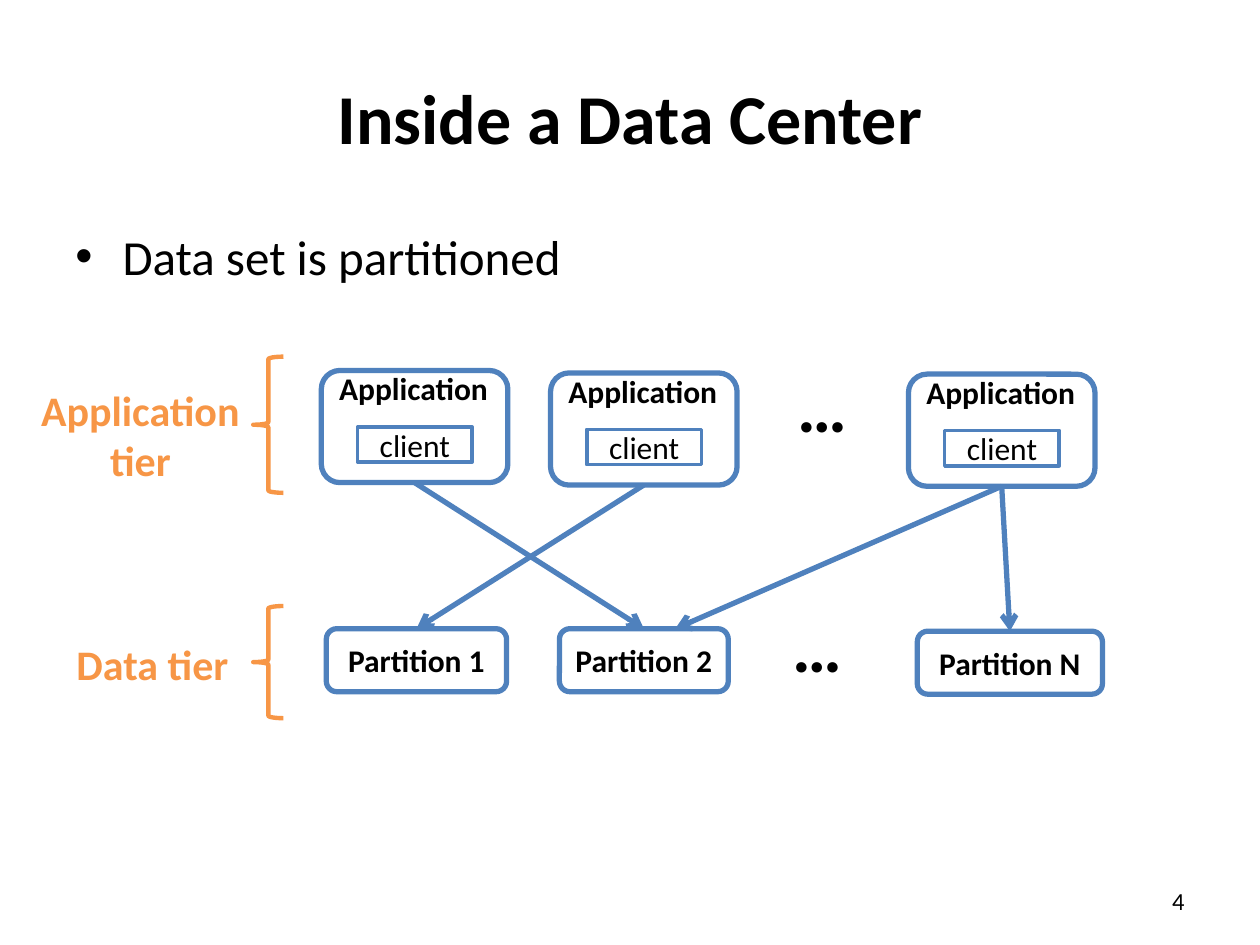
from typing import NamedTuple, Optional

from lxml.etree import SubElement
from pptx import Presentation
from pptx.dml.color import RGBColor
from pptx.enum.shapes import MSO_CONNECTOR, MSO_SHAPE
from pptx.enum.text import MSO_ANCHOR, PP_ALIGN
from pptx.oxml.ns import qn
from pptx.shapes.autoshape import Shape
from pptx.shapes.connector import Connector
from pptx.slide import Slide
from pptx.util import Pt

FONT = "Calibri"
BLACK = RGBColor(0x00, 0x00, 0x00)
WHITE = RGBColor(0xFF, 0xFF, 0xFF)
BLUE = RGBColor(0x4F, 0x81, 0xBD)
ORANGE = RGBColor(0xF7, 0x96, 0x46)
TOP, BOTTOM = 0, 2


class Box(NamedTuple):
    left: float
    top: float
    width: float
    height: float


class TextStyle(NamedTuple):
    size: float
    bold: bool = False
    color: RGBColor = BLACK
    align: PP_ALIGN = PP_ALIGN.LEFT
    anchor: MSO_ANCHOR = MSO_ANCHOR.TOP
    wrap: bool = True


class Partition(NamedTuple):
    label: str
    box: Box


TITLE = TextStyle(40, True, align=PP_ALIGN.CENTER, anchor=MSO_ANCHOR.MIDDLE)
BODY = TextStyle(28)
NODE = TextStyle(18, True, align=PP_ALIGN.CENTER, anchor=MSO_ANCHOR.MIDDLE)
APPLICATION = NODE._replace(align=PP_ALIGN.LEFT)
CLIENT = NODE._replace(bold=False)
ELLIPSIS = TextStyle(40, True, wrap=False)
TIER = TextStyle(24, True, ORANGE, PP_ALIGN.CENTER, wrap=False)
PAGE_NUMBER = TextStyle(14, align=PP_ALIGN.RIGHT, anchor=MSO_ANCHOR.MIDDLE)

APPLICATIONS = [
    Box(183.6, 211.7, 106.6, 64.1),
    Box(314.6, 213.1, 106.6, 64.1),
    Box(519.1, 213.8, 106.6, 64.1),
]
PARTITIONS = [
    Partition("Partition 1", Box(186.5, 359.3, 103, 36)),
    Partition("Partition 2", Box(319.7, 359.3, 96.5, 36)),
    Partition("Partition N", Box(524.2, 360.7, 105.8, 36)),
]
ELLIPSES = [Box(448.6, 203.8, 43.2, 55.4), Box(445.7, 340.6, 43.2, 55.4)]
TIERS = [
    (["Application", "tier"], Box(15.8, 216, 128.9, 65.5), Box(144.7, 203.8, 17.3, 77.8)),
    (["Data tier"], Box(36, 361.4, 102.2, 36), Box(144.7, 346.3, 17.3, 64.1)),
]
# Application index, partition index
REQUESTS = [(0, 1), (1, 0), (2, 2)]
SIDE_REQUEST_END = (385.9, 359.3)


def points(box: Box) -> list[Pt]:
    return [Pt(value) for value in box]


def write(shape: Shape, lines: list[str], style: TextStyle) -> None:
    frame = shape.text_frame
    frame.word_wrap = style.wrap
    frame.vertical_anchor = style.anchor
    for index, line in enumerate(lines):
        paragraph = frame.add_paragraph() if index else frame.paragraphs[0]
        paragraph.alignment = style.align
        run = paragraph.add_run()
        run.text = line
        run.font.name = FONT
        run.font.size = Pt(style.size)
        run.font.bold = style.bold
        run.font.color.rgb = style.color


def add_text(slide: Slide, box: Box, lines: list[str], style: TextStyle) -> Shape:
    text_box = slide.shapes.add_textbox(*points(box))
    write(text_box, lines, style)
    return text_box


def add_outline(slide: Slide, kind: MSO_SHAPE, box: Box, color: RGBColor,
                weight: float, fill: Optional[RGBColor] = None) -> Shape:
    shape = slide.shapes.add_shape(kind, *points(box))
    shape.shadow.inherit = False
    if fill is None:
        shape.fill.background()
    else:
        shape.fill.solid()
        shape.fill.fore_color.rgb = fill
    shape.line.color.rgb = color
    shape.line.width = Pt(weight)
    return shape


def add_node(slide: Slide, box: Box, label: str, style: TextStyle) -> Shape:
    node = add_outline(slide, MSO_SHAPE.ROUNDED_RECTANGLE, box, BLUE, 3, WHITE)
    write(node, [label], style)
    return node


def add_application(slide: Slide, box: Box) -> Shape:
    """Draw an application with its label at the top and a client inside."""
    application = add_node(slide, box, "Application", APPLICATION)
    application.text_frame.margin_top = Pt(0)
    application.text_frame.margin_bottom = Pt(44)
    client_box = Box(box.left + 20.7, box.top + 32.2, 65.5, 20.2)
    client = add_outline(slide, MSO_SHAPE.RECTANGLE, client_box, BLUE, 2)
    write(client, ["client"], CLIENT)
    return application


def add_request(slide: Slide, application: Shape, end: tuple[float, float]) -> Connector:
    """Draw an arrow from the bottom of an application to a point."""
    arrow = slide.shapes.add_connector(
        MSO_CONNECTOR.STRAIGHT, Pt(0), Pt(0), Pt(end[0]), Pt(end[1]))
    arrow.begin_connect(application, BOTTOM)
    arrow.line.color.rgb = BLUE
    arrow.line.width = Pt(3)
    SubElement(arrow.line._get_or_add_ln(), qn("a:tailEnd"), type="arrow")
    SubElement(arrow._element.spPr, qn("a:effectLst"))
    return arrow


def add_bullet(text_box: Shape) -> None:
    properties = text_box.text_frame.paragraphs[0]._p.get_or_add_pPr()
    properties.set("marL", str(Pt(27)))
    properties.set("indent", str(Pt(-27)))
    SubElement(properties, qn("a:buFont"), typeface="Arial")
    SubElement(properties, qn("a:buChar"), char="•")


def main() -> None:
    presentation = Presentation()
    presentation.slide_width = Pt(720)
    presentation.slide_height = Pt(540)
    slide = presentation.slides.add_slide(presentation.slide_layouts[6])

    add_text(slide, Box(36, 21.6, 648, 90), ["Inside a Data Center"], TITLE)
    add_bullet(add_text(slide, Box(36, 126, 648, 396), ["Data set is partitioned"], BODY))

    applications = [add_application(slide, box) for box in APPLICATIONS]
    partitions = [add_node(slide, item.box, item.label, NODE) for item in PARTITIONS]
    for box in ELLIPSES:
        add_text(slide, box, ["…"], ELLIPSIS)

    for source, target in REQUESTS:
        box = PARTITIONS[target].box
        arrow = add_request(slide, applications[source], (box.left, box.top))
        arrow.end_connect(partitions[target], TOP)
    add_request(slide, applications[2], SIDE_REQUEST_END)

    for lines, label_box, brace_box in TIERS:
        add_text(slide, label_box, lines, TIER)
        add_outline(slide, MSO_SHAPE.LEFT_BRACE, brace_box, ORANGE, 2.5)

    add_text(slide, Box(516.2, 500.4, 167.8, 28.8), ["4"], PAGE_NUMBER)
    presentation.save("out.pptx")


if __name__ == "__main__":
    main()
